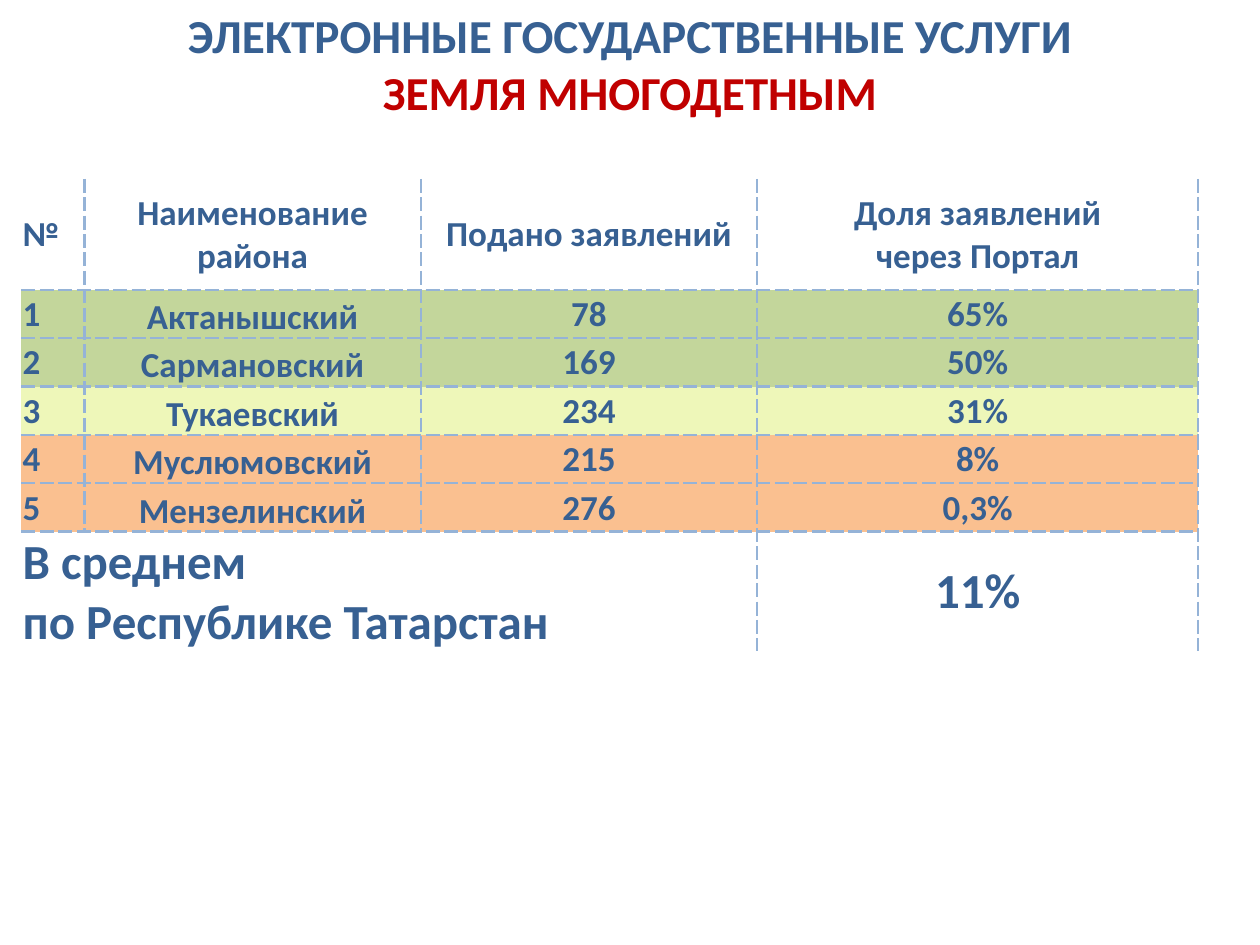
from lxml import etree
from pptx import Presentation
from pptx import util as u
from pptx.dml.color import RGBColor
from pptx.enum import text
from pptx.oxml import ns

BLUE, RED, RULE = "376092", "C00000", "95B3D7"
GREEN, YELLOW, ORANGE = "C3D69B", "EEF7B9", "FAC090"
LEFT, CENTER = text.PP_ALIGN.LEFT, text.PP_ALIGN.CENTER
MIDDLE, TOP = text.MSO_ANCHOR.MIDDLE, text.MSO_ANCHOR.TOP

HEADERS = ["№", "Наименование района", "Подано заявлений",
           "Доля заявлений\nчерез Портал"]
DISTRICTS = [
    ("Актанышский", "78", "65%", GREEN),
    ("Сармановский", "169", "50%", GREEN),
    ("Тукаевский", "234", "31%", YELLOW),
    ("Муслюмовский", "215", "8%", ORANGE),
    ("Мензелинский", "276", "0,3%", ORANGE),
]
COL_WIDTHS = [0.5, 2.67, 2.67, 3.5]
ROW_HEIGHTS = [0.88] + [0.38] * len(DISTRICTS) + [0.95]


def rgb(value):
    return RGBColor.from_string(value)


def write(tf, content, size=20, colors=(BLUE,), align=CENTER, spacing=None):
    """Write one paragraph per line; colors cycle through the lines."""
    for i, line in enumerate(content.split("\n")):
        p = tf.paragraphs[0] if i == 0 else tf.add_paragraph()
        p.alignment = align
        if spacing:
            p.line_spacing = spacing
        r = p.add_run()
        r.text = line
        r.font.name = "Calibri"
        r.font.size = u.Pt(size)
        r.font.bold = True
        r.font.color.rgb = rgb(colors[i % len(colors)])


def set_borders(cell, sides):
    """Draw dashed rules on the given sides (letters of LRTB), none elsewhere."""
    tc_pr = cell._tc.get_or_add_tcPr()
    for side in "LRTB":
        ln = etree.SubElement(tc_pr, ns.qn(f"a:ln{side}"), w=str(u.Pt(1.5)))
        if side not in sides:
            etree.SubElement(ln, ns.qn("a:noFill"))
            continue
        fill = etree.SubElement(ln, ns.qn("a:solidFill"))
        etree.SubElement(fill, ns.qn("a:srgbClr"), val=RULE)
        etree.SubElement(ln, ns.qn("a:prstDash"), val="sysDash")


class SlideBuilder:
    def __init__(self, prs):
        self.s = prs.slides.add_slide(prs.slide_layouts[6])

    def title(self, content, left, top, width, height, **style):
        sp = self.s.shapes.add_textbox(*map(u.Inches, (left, top, width, height)))
        tf = sp.text_frame
        tf.word_wrap = True
        write(tf, content, **style)

    def table(self, left, top, col_widths, row_heights):
        box = map(u.Inches, (left, top, sum(col_widths), sum(row_heights)))
        tbl = self.s.shapes.add_table(len(row_heights), len(col_widths), *box).table
        tbl.first_row = tbl.horz_banding = False
        for col, width in zip(tbl.columns, col_widths):
            col.width = u.Inches(width)
        for row, height in zip(tbl.rows, row_heights):
            row.height = u.Inches(height)
        return tbl

    def cell(self, cell, content, sides, fill=None, anchor=MIDDLE, margin=0.01,
             top_margin=0.01, **style):
        cell.margin_left = cell.margin_right = u.Inches(margin)
        cell.margin_top, cell.margin_bottom = u.Inches(top_margin), 0
        cell.vertical_anchor = anchor
        set_borders(cell, sides)
        if fill:
            cell.fill.solid()
            cell.fill.fore_color.rgb = rgb(fill)
        else:
            cell.fill.background()
        write(cell.text_frame, content, **style)


def main():
    prs = Presentation()
    prs.slide_width, prs.slide_height = u.Inches(10), u.Inches(7.5)
    slide = SlideBuilder(prs)
    slide.title("ЭЛЕКТРОННЫЕ ГОСУДАРСТВЕННЫЕ УСЛУГИ\nЗЕМЛЯ МНОГОДЕТНЫМ",
                0, 0, 10, 1.01, size=27, colors=(BLUE, RED))

    tbl = slide.table(0.17, 1.42, COL_WIDTHS, ROW_HEIGHTS)
    for c, header in enumerate(HEADERS):
        slide.cell(tbl.cell(0, c), header, "LRB" if c else "RB",
                   align=CENTER if c else LEFT)

    for n, (name, count, share, fill) in enumerate(DISTRICTS, 1):
        slide.cell(tbl.cell(n, 0), str(n), "RTB", fill, align=LEFT)
        slide.cell(tbl.cell(n, 1), name, "LRTB", fill, anchor=TOP,
                   margin=0.07, top_margin=0, spacing=1.15)
        for c, value in enumerate((count, share), 2):
            slide.cell(tbl.cell(n, c), value, "LRTB", fill)

    last = len(ROW_HEIGHTS) - 1
    tbl.cell(last, 0).merge(tbl.cell(last, 2))
    slide.cell(tbl.cell(last, 0), "В среднем\nпо Республике Татарстан", "RT",
               size=28, align=LEFT)
    slide.cell(tbl.cell(last, 3), "11%", "LRT", size=28)
    prs.save("out.pptx")


if __name__ == "__main__":
    main()
